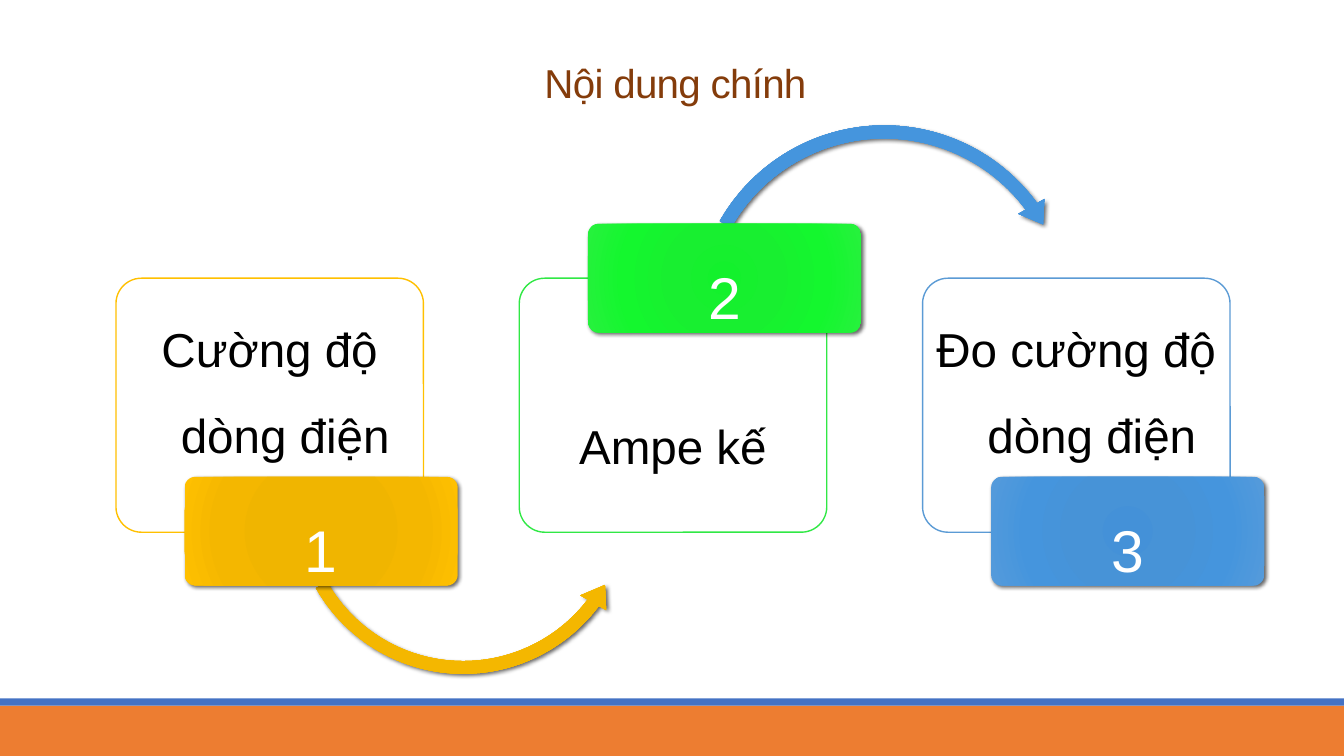
from pptx import Presentation
from pptx.dml.color import RGBColor
from pptx.enum.shapes import MSO_SHAPE
from pptx.enum.text import MSO_ANCHOR, PP_ALIGN
from pptx.oxml import parse_xml
from pptx.oxml.ns import nsdecls, qn
from pptx.util import Inches, Pt
from lxml.etree import SubElement

FONT = "Arial"
GOLD = ["EEB300", "F0B500", "F4B700", "FFC000"]
GREEN = ["13F12C", "18EF30", "14F72E", "27F13E"]
BLUE = ["4491D8", "4793D7", "4595DD", "559BDB"]

# label, outline, tag shades, tag above the card
STEPS = [
    ("Cường độ dòng điện", "FFC000", GOLD, False),
    ("Ampe kế", "30E845", GREEN, True),
    ("Đo cường độ dòng điện", "5B9BD5", BLUE, False),
]
# kind, left, top, size, shades, adjustments
ARROWS = [
    (MSO_SHAPE.LEFT_CIRCULAR_ARROW, 2.83, 3.24, 3.53, GOLD,
     (0.036, 4.506, 22.261, 90.245, 0.042)),
    (MSO_SHAPE.CIRCULAR_ARROW, 6.81, 1.16, 3.92, BLUE,
     (0.033, 4.023, 194.221, 125.755, 0.038)),
]


def color(code):
    return RGBColor.from_string(code)


def add_shape(slide, kind, box, fill=None, line=None, adjust=()):
    shape = slide.shapes.add_shape(kind, *map(Inches, box))
    shape.shadow.inherit = False
    for i, value in enumerate(adjust):
        shape.adjustments[i] = value
    if fill:
        shape.fill.solid()
        shape.fill.fore_color.rgb = color(fill)
    if line:
        shape.line.color.rgb = color(line)
        shape.line.width = Pt(1)
    else:
        shape.line.fill.background()
    return shape


def add_glow(shape, shades):
    """Radial gradient with a soft shadow at the lower right."""
    stops = "".join(
        f'<a:gs pos="{pos * 1000}"><a:srgbClr val="{shade}"/></a:gs>'
        for pos, shade in zip((0, 34, 70, 100), shades))
    props = shape.fill._xPr
    shape.fill.background()
    props.replace(props.find(qn("a:noFill")), parse_xml(
        f'<a:gradFill {nsdecls("a")} rotWithShape="1"><a:gsLst>{stops}</a:gsLst>'
        '<a:path path="circle"><a:fillToRect l="100000" t="100000" '
        'r="100000" b="100000"/></a:path></a:gradFill>'))
    props.find(qn("a:effectLst")).append(parse_xml(
        f'<a:outerShdw {nsdecls("a")} blurRad="{Pt(3)}" dist="{Pt(2)}" '
        'dir="2700000" algn="ctr" rotWithShape="0"><a:srgbClr val="000000">'
        '<a:alpha val="60000"/></a:srgbClr></a:outerShdw>'))


def set_text(shape, text, size, shade, pads=(0.1, 0.05)):
    frame = shape.text_frame
    side, edge = map(Inches, pads)
    form = {"word_wrap": True, "vertical_anchor": MSO_ANCHOR.MIDDLE,
            "margin_left": side, "margin_right": side,
            "margin_top": edge, "margin_bottom": edge}
    for name, value in form.items():
        setattr(frame, name, value)
    para = frame.paragraphs[0]
    para.alignment = PP_ALIGN.CENTER
    para.line_spacing = 1.5
    run = para.add_run()
    run.text = text
    for name, value in {"size": Pt(size), "name": FONT}.items():
        setattr(run.font, name, value)
    run.font.color.rgb = color(shade)
    return para


def add_text(slide, box, *args):
    return set_text(slide.shapes.add_textbox(*map(Inches, box)), *args)


def add_card(slide, left, label, line, above):
    card = add_shape(slide, MSO_SHAPE.ROUNDED_RECTANGLE,
                     (left, 2.76, 3.05, 2.52), "FFFFFF", line, [0.1])
    white = card.fill._xPr.find(qn("a:solidFill"))[0]
    SubElement(white, qn("a:alpha")).set("val", "90000")
    top = 3.35 if above else 2.81
    para = add_text(slide, (left + 0.06, top, 2.93, 1.86),
                    label, 34, "000000", (0.06, 0.07))
    # Hanging indent
    para.level = 1
    props = para._p.get_or_add_pPr()
    for name, value in {"marL": 0.31, "indent": -0.31}.items():
        props.set(name, str(Inches(value)))


def add_tag(slide, left, number, shades, above):
    tag = add_shape(slide, MSO_SHAPE.ROUNDED_RECTANGLE,
                    (left + 0.68, 2.22 if above else 4.73, 2.71, 1.08),
                    adjust=[0.1])
    add_glow(tag, shades)
    set_text(tag, str(number), 42, "FFFFFF", (0.12, 0.09))


def add_arrow(slide, kind, left, top, size, shades, adjust):
    arrow = add_shape(slide, kind, (left, top, size, size), adjust=adjust)
    add_glow(arrow, shades)


def main():
    deck = Presentation()
    deck.slide_width, deck.slide_height = Inches(13.33), Inches(7.5)
    slide = deck.slides.add_slide(deck.slide_layouts[6])

    # Footer bands
    add_shape(slide, MSO_SHAPE.RECTANGLE, (0, 7, 13.33, 0.5), "ED7D31")
    add_shape(slide, MSO_SHAPE.RECTANGLE, (0, 6.93, 13.33, 0.07), "4472C4")

    # Title
    title = add_text(slide, (1.2, 0.31, 11, 0.77),
                     "Nội dung chính", 28.8, "843C0B")
    title.runs[0].font._element.set("spc", "-50")

    # Steps, each arrow behind its own tag
    for i, (label, line, shades, above) in enumerate(STEPS):
        left = 1.15 + 4 * i
        add_card(slide, left, label, line, above)
        if i < len(ARROWS):
            add_arrow(slide, *ARROWS[i])
        add_tag(slide, left, i + 1, shades, above)

    deck.save("out.pptx")


if __name__ == "__main__":
    main()
